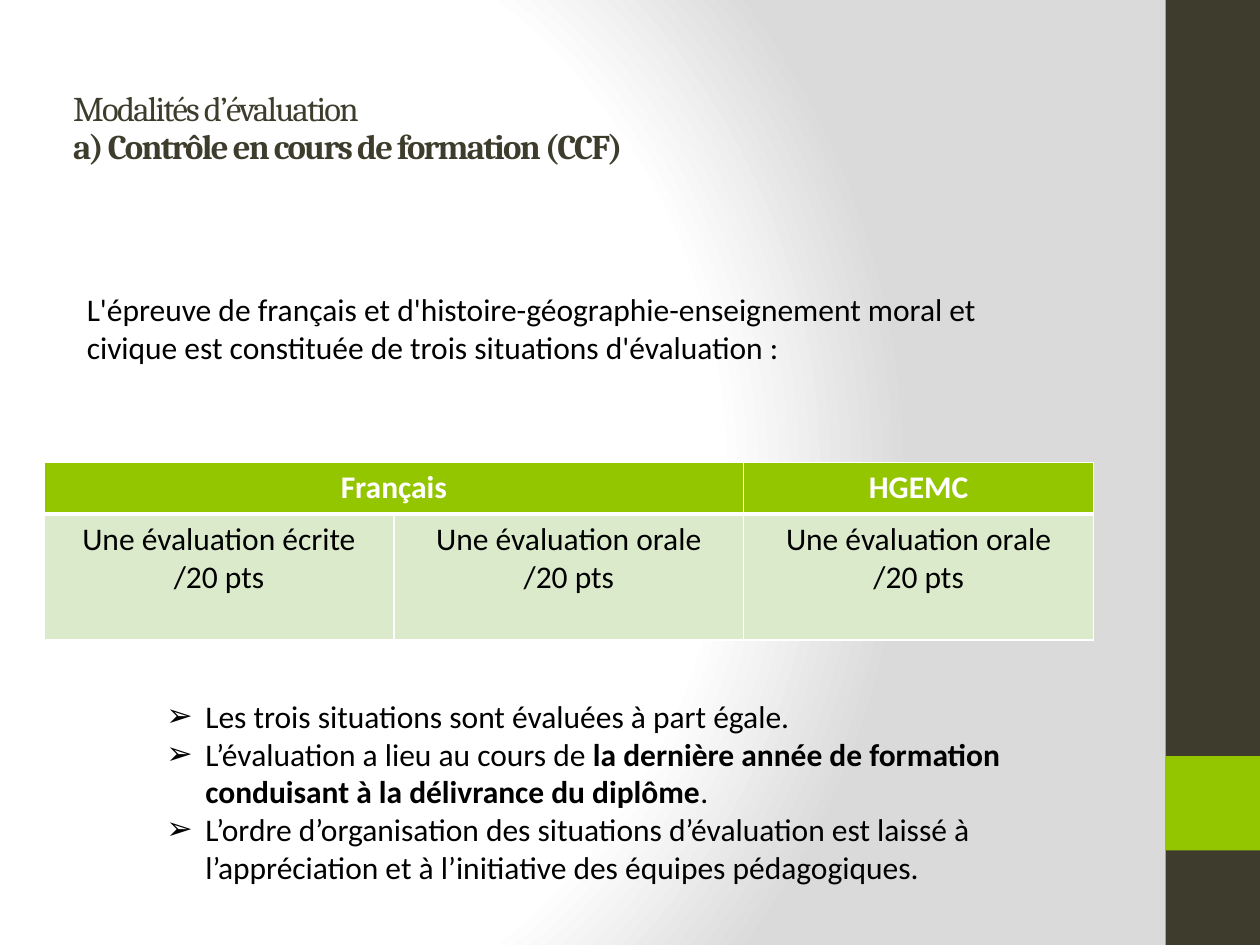
from lxml import etree
from pptx import Presentation
from pptx.dml.color import RGBColor
from pptx.enum.shapes import MSO_SHAPE
from pptx.enum.text import MSO_ANCHOR, MSO_AUTO_SIZE, PP_ALIGN
from pptx.oxml import parse_xml
from pptx.oxml.ns import nsdecls, qn
from pptx.util import Inches, Pt

RECTANGLE = MSO_SHAPE.RECTANGLE
MIDDLE = MSO_ANCHOR.MIDDLE
LEFT, CENTER = PP_ALIGN.LEFT, PP_ALIGN.CENTER
NO_AUTOFIT = MSO_AUTO_SIZE.NONE

OLIVE = RGBColor(0x3E, 0x3D, 0x2D)
GREEN = RGBColor(0x94, 0xC6, 0x00)
PALE_GREEN = RGBColor(0xDC, 0xEA, 0xCC)
WHITE = RGBColor(0xFF, 0xFF, 0xFF)
BLACK = RGBColor(0x00, 0x00, 0x00)
GREY = RGBColor(0xDA, 0xDA, 0xDA)

INTRO = ("L'épreuve de français et d'histoire-géographie-enseignement moral et "
         "civique est constituée de trois situations d'évaluation :")
EVALUATIONS = ["Une évaluation écrite", "Une évaluation orale", "Une évaluation orale"]
# Each rule is a list of (text, bold) runs.
RULES = [
    [("Les trois situations sont évaluées à part égale.", False)],
    [("L’évaluation a lieu au cours de ", False),
     ("la dernière année de formation conduisant à la délivrance du diplôme", True),
     (".", False)],
    [("L’ordre d’organisation des situations d’évaluation est laissé à "
      "l’appréciation et à l’initiative des équipes pédagogiques.", False)],
]


def place(shape, left, top, width, height):
    shape.left, shape.top = Inches(left), Inches(top)
    shape.width, shape.height = Inches(width), Inches(height)


def set_font(font, color, size=18, name="Calibri"):
    font.name, font.size = name, Pt(size)
    font.color.rgb = color


def set_background(slide):
    """Radial gradient, white in the middle and grey towards the right."""
    stops = "".join(
        f'<a:gs pos="{percent * 1000}"><a:srgbClr val="{color}"/></a:gs>'
        for percent, color in [(0, WHITE), (75, WHITE), (100, GREY)])
    background = parse_xml(
        f'<p:bg {nsdecls("p", "a")}><p:bgPr><a:gradFill rotWithShape="1">'
        f'<a:gsLst>{stops}</a:gsLst><a:path path="circle">'
        '<a:fillToRect l="20000" t="50000" r="100000" b="50000"/></a:path>'
        '</a:gradFill><a:effectLst/></p:bgPr></p:bg>')
    slide.element.cSld.insert(0, background)


def add_band(slide, top, height, color):
    band = slide.shapes.add_shape(
        RECTANGLE, Inches(9.25), Inches(top), Inches(0.75), Inches(height))
    band.shadow.inherit = False
    band.fill.solid()
    band.fill.fore_color.rgb = color
    band.line.fill.background()


def fill_title(title):
    place(title, 0.48, 0.71, 8.33, 0.63)
    frame = title.text_frame
    frame.auto_size = NO_AUTOFIT
    frame.vertical_anchor = MIDDLE
    paragraph = frame.paragraphs[0]
    paragraph.alignment = LEFT
    paragraph.line_spacing = 0.9
    set_font(paragraph.font, OLIVE, 19.8, "Cambria")
    topic = paragraph.add_run()
    topic.text = "Modalités d’évaluation"
    paragraph.add_line_break()
    section = paragraph.add_run()
    section.text = "a) Contrôle en cours de formation (CCF)"
    section.font.bold = True
    for run in (topic, section):
        run.font._element.set("spc", "-100")


def add_intro(slide):
    intro = slide.shapes.add_textbox(
        Inches(0.59), Inches(2.25), Inches(7.95), Inches(0.71))
    intro.text_frame.word_wrap = True
    paragraph = intro.text_frame.paragraphs[0]
    paragraph.text = INTRO
    set_font(paragraph.font, BLACK)


def set_borders(cell, bottom_width):
    properties = cell._tc.get_or_add_tcPr()
    for side, width in [("L", 1), ("R", 1), ("T", 1), ("B", bottom_width)]:
        line = etree.SubElement(properties, qn(f"a:ln{side}"), w=str(Pt(width)))
        fill = etree.SubElement(line, qn("a:solidFill"))
        etree.SubElement(fill, qn("a:srgbClr"), val=str(WHITE))


def format_cell(cell, is_header):
    set_borders(cell, 3 if is_header else 1)
    cell.fill.solid()
    cell.fill.fore_color.rgb = GREEN if is_header else PALE_GREEN
    for paragraph in cell.text_frame.paragraphs:
        paragraph.alignment = CENTER
        paragraph.font.bold = is_header
        set_font(paragraph.font, WHITE if is_header else BLACK)


def add_evaluation_table(slide):
    table = slide.shapes.add_table(
        2, 3, Inches(0.35), Inches(3.67), Inches(8.33), Inches(1.41)).table
    table.rows[0].height, table.rows[1].height = Inches(0.41), Inches(1)
    table.cell(0, 0).merge(table.cell(0, 1))
    table.cell(0, 0).text = "Français"
    table.cell(0, 2).text = "HGEMC"
    for column, evaluation in enumerate(EVALUATIONS):
        table.cell(1, column).text = f"{evaluation}\n/20 pts"
        for row in range(2):
            format_cell(table.cell(row, column), is_header=row == 0)


def set_arrow_bullet(paragraph):
    properties = paragraph._p.get_or_add_pPr()
    properties.set("marL", str(Inches(0.31)))
    properties.set("indent", str(-Inches(0.31)))
    etree.SubElement(properties, qn("a:buChar"), char="➢")


def fill_rules(body):
    place(body, 1.22, 5.48, 6.85, 1.62)
    frame = body.text_frame
    frame.auto_size = NO_AUTOFIT
    for index, rule in enumerate(RULES):
        paragraph = frame.add_paragraph() if index else frame.paragraphs[0]
        paragraph.space_before = Pt(0)
        set_arrow_bullet(paragraph)
        set_font(paragraph.font, BLACK)
        for text, bold in rule:
            run = paragraph.add_run()
            run.text = text
            run.font.bold = bold


def main():
    presentation = Presentation()
    presentation.slide_width, presentation.slide_height = Inches(10), Inches(7.5)
    slide = presentation.slides.add_slide(presentation.slide_layouts[1])
    set_background(slide)
    add_band(slide, 0, 7.5, OLIVE)
    add_band(slide, 6, 0.75, GREEN)
    fill_title(slide.shapes.title)
    add_evaluation_table(slide)
    fill_rules(slide.placeholders[1])
    add_intro(slide)
    presentation.save("out.pptx")


if __name__ == "__main__":
    main()
